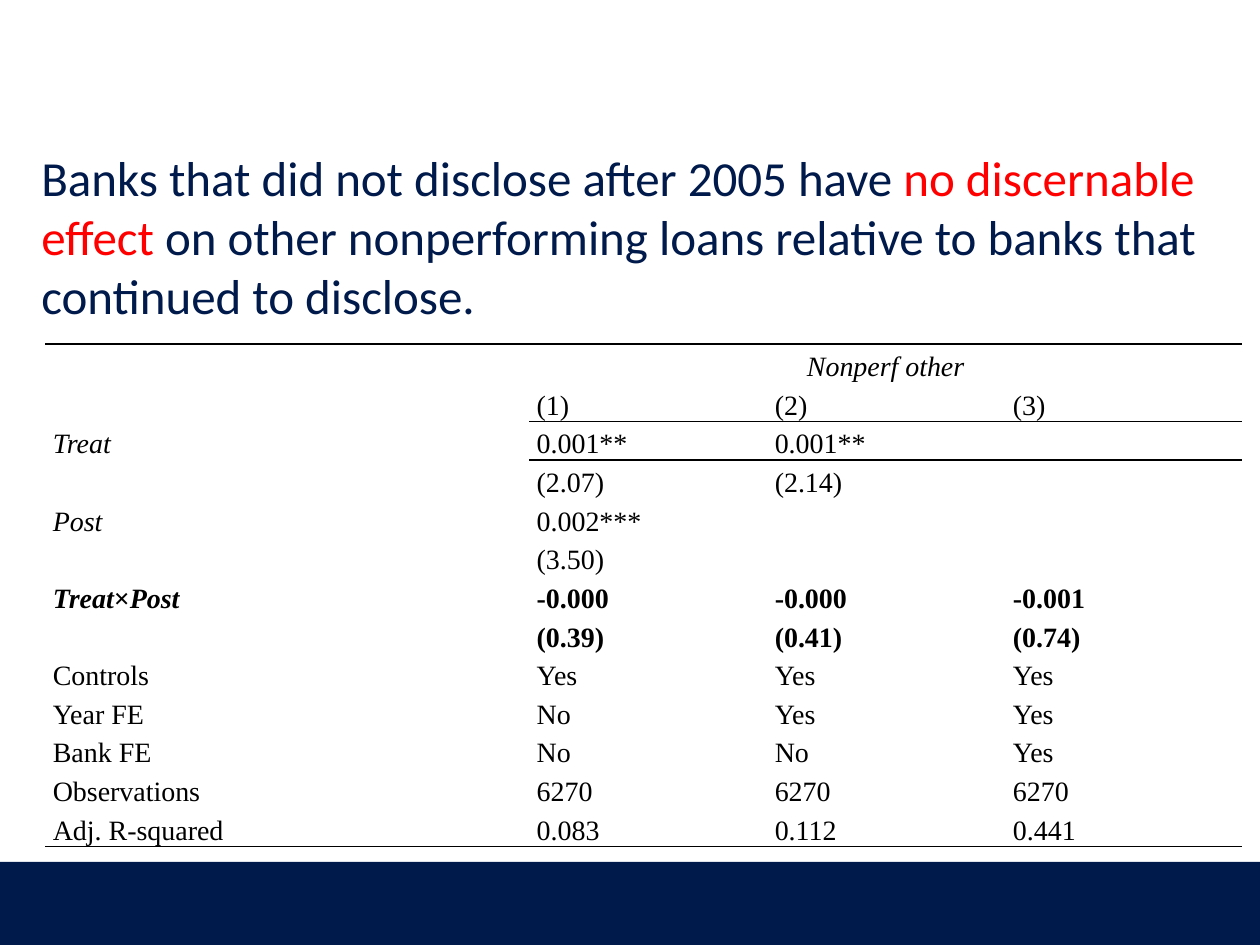
from lxml import etree
from pptx import Presentation
from pptx.dml.color import RGBColor
from pptx.enum.shapes import MSO_SHAPE
from pptx.enum.text import MSO_ANCHOR, PP_ALIGN
from pptx.oxml.ns import qn
from pptx.util import Inches, Pt

RECTANGLE = MSO_SHAPE.RECTANGLE
MIDDLE, BOTTOM = MSO_ANCHOR.MIDDLE, MSO_ANCHOR.BOTTOM
LEFT, CENTER = PP_ALIGN.LEFT, PP_ALIGN.CENTER

COLORS = {"navy": "001A4B", "red": "FF0000", "black": "000000"}
NO_STYLE = "{2D5ABB26-0587-4C30-8999-92F81FD0307C}"

HEADLINE = [
    ("Banks that did not disclose after 2005 have ", "navy"),
    ("no discernable effect", "red"),
    (" on other nonperforming loans relative to banks that continued to disclose.", "navy"),
]
RESULTS = [
    ["", "Nonperf other", "", ""],
    ["", "(1)", "(2)", "(3)"],
    ["Treat", "0.001**", "0.001**", ""],
    ["", "(2.07)", "(2.14)", ""],
    ["Post", "0.002***", "", ""],
    ["", "(3.50)", "", ""],
    ["Treat×Post", "-0.000", "-0.000", "-0.001"],
    ["", "(0.39)", "(0.41)", "(0.74)"],
    ["Controls", "Yes", "Yes", "Yes"],
    ["Year FE", "No", "Yes", "Yes"],
    ["Bank FE", "No", "No", "Yes"],
    ["Observations", "6270", "6270", "6270"],
    ["Adj. R-squared", "0.083", "0.112", "0.441"],
]
ITALIC_RUNS = {"Nonperf other", "Treat", "Post"}
SPLIT_LABELS = {"Treat×Post": ["Treat", "×", "Post"]}
BOLD_ROWS = {6, 7}
LAST_ROW = len(RESULTS) - 1
COLUMN_WIDTHS = [3.84, 1.89, 1.89, 1.88]
TABLE_HEIGHT = 3.99


def add_run(paragraph, text, font, size, color, bold=False, italic=False):
    run = paragraph.add_run()
    run.text = text
    run.font.name = font
    run.font.size = Pt(size)
    run.font.bold = bold
    run.font.italic = italic
    run.font.color.rgb = RGBColor.from_string(COLORS[color])


def rule_cell(cell, side):
    properties = cell._tc.get_or_add_tcPr()
    line = etree.SubElement(properties, qn(f"a:ln{side}"), w=str(Pt(1)))
    fill = etree.SubElement(line, qn("a:solidFill"))
    etree.SubElement(fill, qn("a:srgbClr"), val=COLORS["black"])


def fill_cell(cell, text, row, column):
    if row == 0 or (row == 2 and column > 0):
        rule_cell(cell, "T")
    if row == LAST_ROW or (row == 1 and column > 0):
        rule_cell(cell, "B")
    cell.fill.background()
    cell.margin_left = cell.margin_right = Inches(0.06)
    cell.margin_top = cell.margin_bottom = 0
    cell.vertical_anchor = BOTTOM
    paragraph = cell.text_frame.paragraphs[0]
    paragraph.alignment = CENTER if row == 0 else LEFT
    paragraph.line_spacing = 1.15
    if not text:
        etree.SubElement(paragraph._p, qn("a:endParaRPr"), sz="1600")
    for part in SPLIT_LABELS.get(text, [text] if text else []):
        add_run(paragraph, part, "Times New Roman", 16, "black",
                row in BOLD_ROWS, part in ITALIC_RUNS)


def add_footer(slide):
    footer = slide.shapes.add_shape(
        RECTANGLE, 0, Inches(6.84), Inches(10), Inches(0.66))
    footer.shadow.inherit = False
    footer.fill.solid()
    footer.fill.fore_color.rgb = RGBColor.from_string(COLORS["navy"])
    footer.line.fill.background()


def add_results(slide):
    frame = slide.shapes.add_table(
        len(RESULTS), len(COLUMN_WIDTHS), Inches(0.36), Inches(2.73),
        Inches(sum(COLUMN_WIDTHS)), Inches(TABLE_HEIGHT))
    results = frame.table
    results.first_row = results.horz_banding = False
    results._tbl.tblPr.find(qn("a:tableStyleId")).text = NO_STYLE
    for column, width in zip(results.columns, COLUMN_WIDTHS):
        column.width = Inches(width)
    results.cell(0, 1).merge(results.cell(0, 3))
    for row, values in enumerate(RESULTS):
        for column, text in enumerate(values):
            fill_cell(results.cell(row, column), text, row, column)


def add_headline(slide):
    headline = slide.shapes.add_textbox(
        Inches(0.23), Inches(1.41), Inches(9.63), Inches(0.92)).text_frame
    headline.word_wrap = True
    headline.vertical_anchor = MIDDLE
    for text, color in HEADLINE:
        add_run(headline.paragraphs[0], text, "Calibri", 28, color)


def main():
    deck = Presentation()
    deck.slide_width, deck.slide_height = Inches(10), Inches(7.5)
    slide = deck.slides.add_slide(deck.slide_layouts[6])
    add_footer(slide)
    add_results(slide)
    add_headline(slide)
    deck.save("out.pptx")


if __name__ == "__main__":
    main()
